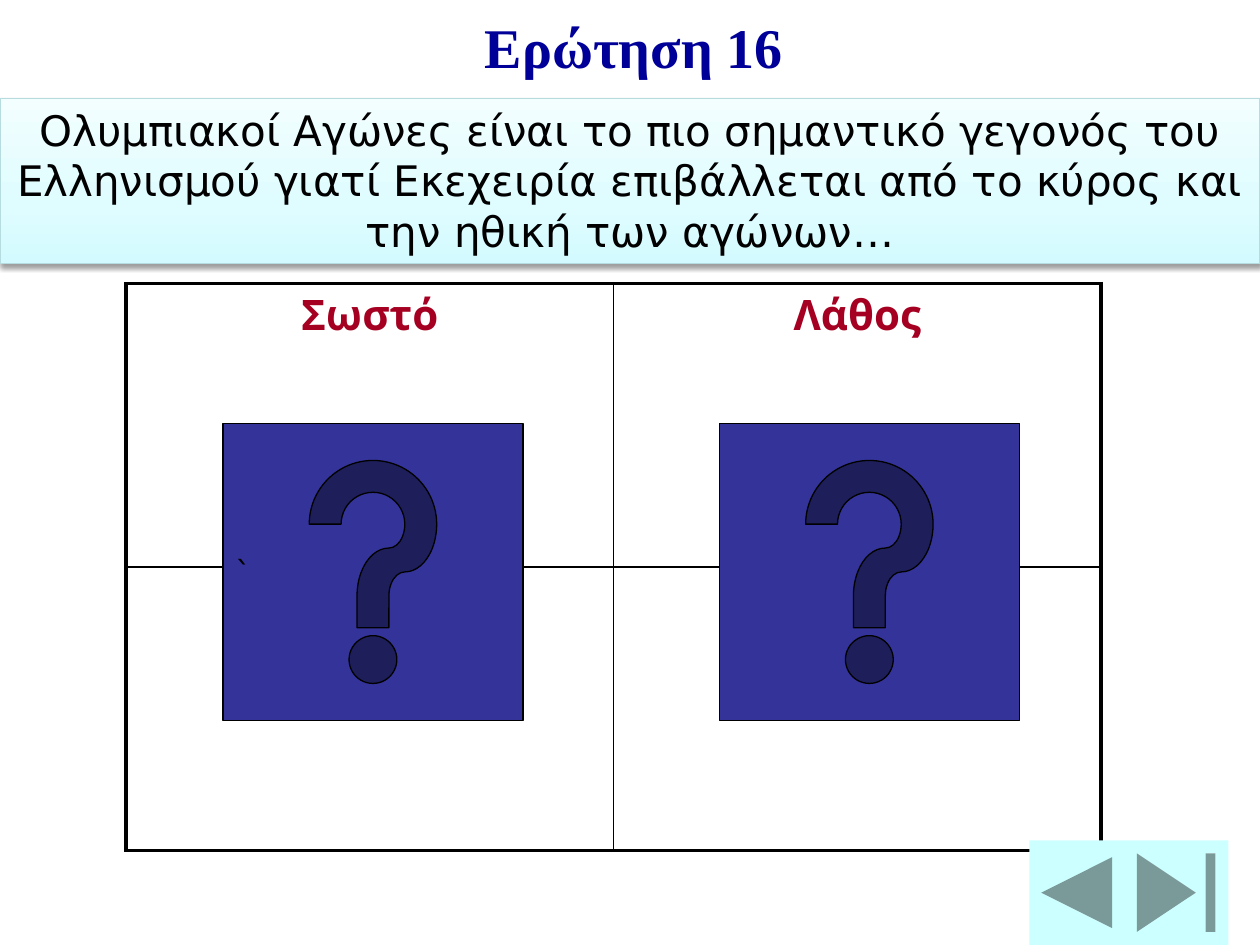
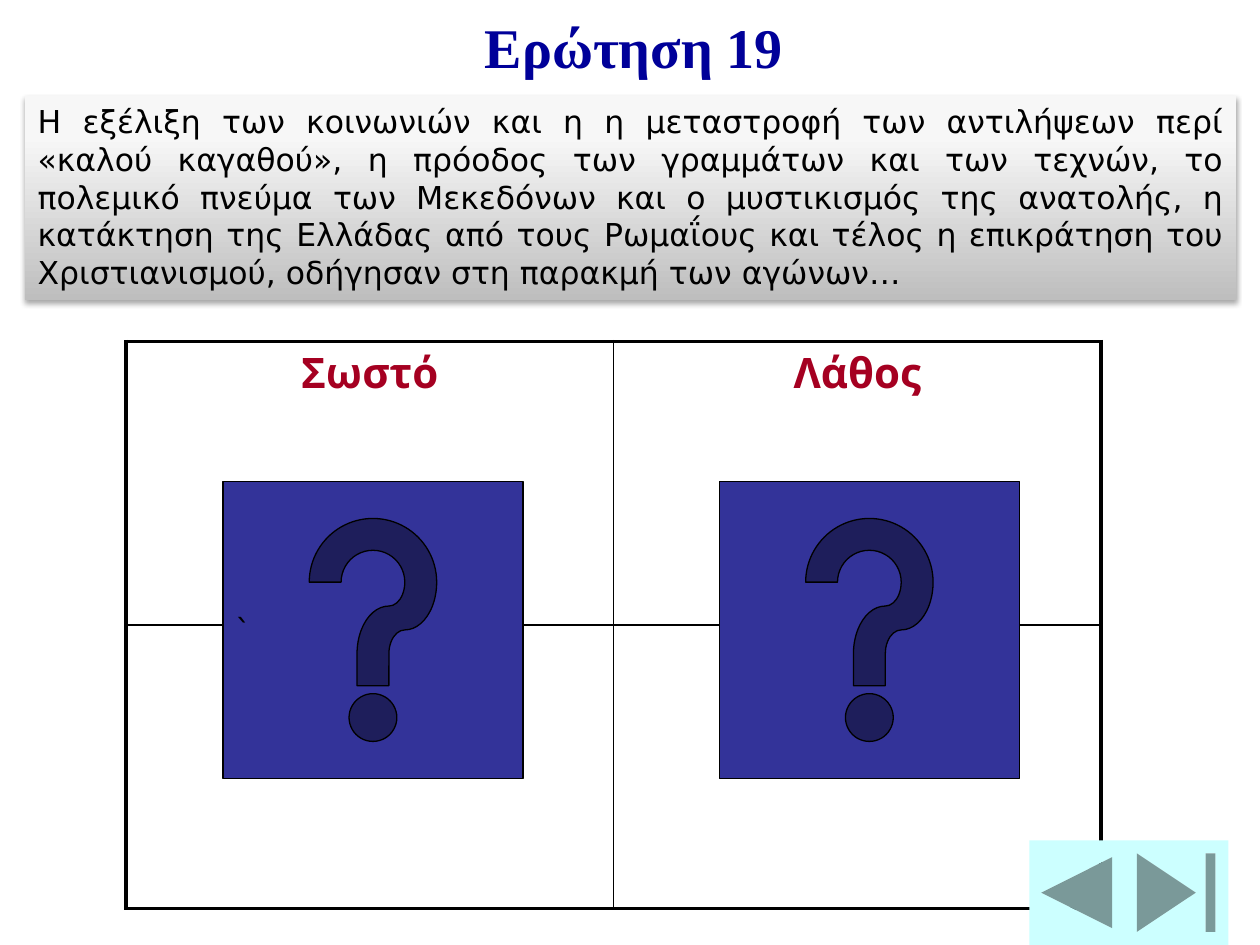
"""Builds two true-or-false quiz slides about the ancient Olympic Games."""
from dataclasses import dataclass

from lxml import etree
from pptx import Presentation
from pptx.dml.color import RGBColor
from pptx.enum.shapes import MSO_SHAPE
from pptx.enum.text import MSO_ANCHOR, MSO_AUTO_SIZE, PP_ALIGN
from pptx.oxml.ns import qn
from pptx.util import Emu, Pt

PX = 9144
RECT = MSO_SHAPE.RECTANGLE
HELP = MSO_SHAPE.ACTION_BUTTON_HELP
END = MSO_SHAPE.ACTION_BUTTON_END
BACK = MSO_SHAPE.ACTION_BUTTON_BACK_OR_PREVIOUS
TOP, MIDDLE = MSO_ANCHOR.TOP, MSO_ANCHOR.MIDDLE
LEFT, CENTER, JUSTIFY = PP_ALIGN.LEFT, PP_ALIGN.CENTER, PP_ALIGN.JUSTIFY
GROW = MSO_AUTO_SIZE.SHAPE_TO_FIT_TEXT


@dataclass(frozen=True)
class Theme:
    ink: str = "000000"
    paper: str = "FFFFFF"
    title: str = "000099"
    answer: str = "A50021"
    help: str = "333399"
    nav: str = "CCFFFF"
    aqua: tuple = ((0, "D3FBFF"), (35, "DFFCFF"), (100, "F2FEFF"))
    aqua_line: str = "B6DCDF"
    gray: tuple = ((0, "BEBEBE"), (80, "F7F7F7"), (100, "F8F8F8"))
    title_font: str = "Times New Roman"
    answer_font: str = "Montserrat"
    body_font: str = "DejaVu Sans"
    title_size: int = 32
    large: int = 24
    body: int = 18
    outer: float = 2.25
    inner: float = 1
    outline: float = 0.75


def child(parent, tag, **attrs):
    return etree.SubElement(parent, qn(tag), {k: str(v) for k, v in attrs.items()})


class Deck:
    def __init__(self, theme):
        self.theme = theme
        self.prs = Presentation()
        self.prs.slide_width, self.prs.slide_height = Emu(1000 * PX), Emu(750 * PX)
        self.s = None

    def slide(self):
        self.s = self.prs.slides.add_slide(self.prs.slide_layouts[6])

    def set_text(self, tf, text, font, size, color, align=LEFT, bold=False):
        p = tf.paragraphs[0]
        p.text, p.alignment = text, align
        p.font.name, p.font.size, p.font.bold = font, Pt(size), bold
        p.font.color.rgb = RGBColor.from_string(color)

    def title(self, text):
        t = self.theme
        tf = self.s.shapes.add_textbox(*(Emu(v * PX) for v in (375, 5, 267, 64))).text_frame
        tf.word_wrap, tf.auto_size = True, GROW
        self.set_text(tf, text, t.title_font, t.title_size, t.title, bold=True)

    def shape(self, kind, box, fill=None, line=None):
        sp = self.s.shapes.add_shape(kind, *(Emu(v * PX) for v in box))
        sp.shadow.inherit = False
        if fill:
            sp.fill.solid()
            sp.fill.fore_color.rgb = RGBColor.from_string(fill)
        if line:
            sp.line.color.rgb = RGBColor.from_string(line)
            sp.line.width = Pt(self.theme.outline)
        else:
            sp.line.fill.background()
        return sp

    def help_button(self, box, text=""):
        t = self.theme
        sp = self.shape(HELP, box, t.help, t.ink)
        if text:
            tf = sp.text_frame
            tf.word_wrap, tf.vertical_anchor = False, MIDDLE
            self.set_text(tf, text, t.body_font, t.body, t.ink)

    def banner(self, text, box, stops, size, align, alpha, distance, line=None):
        t = self.theme
        sp = self.shape(RECT, box, line=line)
        sp.fill.gradient()
        sp.fill.gradient_angle = 90
        gs_list = sp._element.spPr.find(qn("a:gradFill")).find(qn("a:gsLst"))
        for gs in list(gs_list):
            gs_list.remove(gs)
        for pos, color in stops:
            child(child(gs_list, "a:gs", pos=pos * 1000), "a:srgbClr", val=color)
        shadow = child(sp._element.spPr.find(qn("a:effectLst")), "a:outerShdw",
                       blurRad=Pt(3.1), dist=Pt(distance), dir=5400000, rotWithShape=0)
        child(child(shadow, "a:srgbClr", val=t.ink), "a:alpha", val=alpha * 1000)
        tf = sp.text_frame
        tf.word_wrap, tf.auto_size, tf.vertical_anchor = True, GROW, TOP
        self.set_text(tf, text, t.body_font, size, t.ink, align)

    def border(self, cell, widths):
        pr = cell._tc.get_or_add_tcPr()
        for i, (side, width) in enumerate(zip("LRTB", widths)):
            ln = child(pr, f"a:ln{side}", w=Pt(width))
            child(child(ln, "a:solidFill"), "a:srgbClr", val=self.theme.ink)
            pr.insert(i, ln)

    def table(self, heads, box):
        t = self.theme
        table = self.s.shapes.add_table(2, len(heads), *(Emu(v * PX) for v in box)).table
        table.first_row = table.horz_banding = False
        for r in range(2):
            for c, head in enumerate(heads):
                cell = table.cell(r, c)
                cell.fill.solid()
                cell.fill.fore_color.rgb = RGBColor.from_string(t.paper)
                edges = (c == 0, c == len(heads) - 1, r == 0, r == 1)
                self.border(cell, [t.outer if edge else t.inner for edge in edges])
                if r == 0:
                    self.set_text(cell.text_frame, head, t.answer_font, t.large,
                                  t.answer, CENTER, True)

    def question(self, number, top, **banner):
        self.slide()
        self.table(("Σωστό", "Λάθος"), (100, top, 774, 450))
        self.title(f"Ερώτηση {number}")
        for left, text in ((177, "`"), (571, "")):
            self.help_button((left, top + 111, 238, 236), text)
        self.shape(END, (892, 667, 83, 83), self.theme.nav)
        self.shape(BACK, (817, 667, 75, 83), self.theme.nav)
        self.banner(**banner)


def main():
    t = Theme()
    deck = Deck(t)
    deck.question(
        16, 225, box=(0, 78, 1000, 131), stops=t.aqua, line=t.aqua_line,
        size=t.large, align=CENTER, alpha=38, distance=1.6,
        text="Ολυμπιακοί Αγώνες είναι το πιο σημαντικό γεγονός του Ελληνισμού γιατί "
             "Εκεχειρία επιβάλλεται από το κύρος και την ηθική των αγώνων…")
    deck.question(
        19, 271, box=(20, 76, 961, 162), stops=t.gray,
        size=t.body, align=JUSTIFY, alpha=35, distance=1.8,
        text="Η εξέλιξη των κοινωνιών και η η μεταστροφή των αντιλήψεων περί "
             "«καλού καγαθού», η πρόοδος των γραμμάτων και των τεχνών, το πολεμικό "
             "πνεύμα των Μεκεδόνων και ο μυστικισμός της ανατολής, η κατάκτηση της "
             "Ελλάδας από τους Ρωμαΐους και τέλος η επικράτηση του Χριστιανισμού, "
             "οδήγησαν στη παρακμή των αγώνων…")
    deck.prs.save("out.pptx")


if __name__ == "__main__":
    main()
